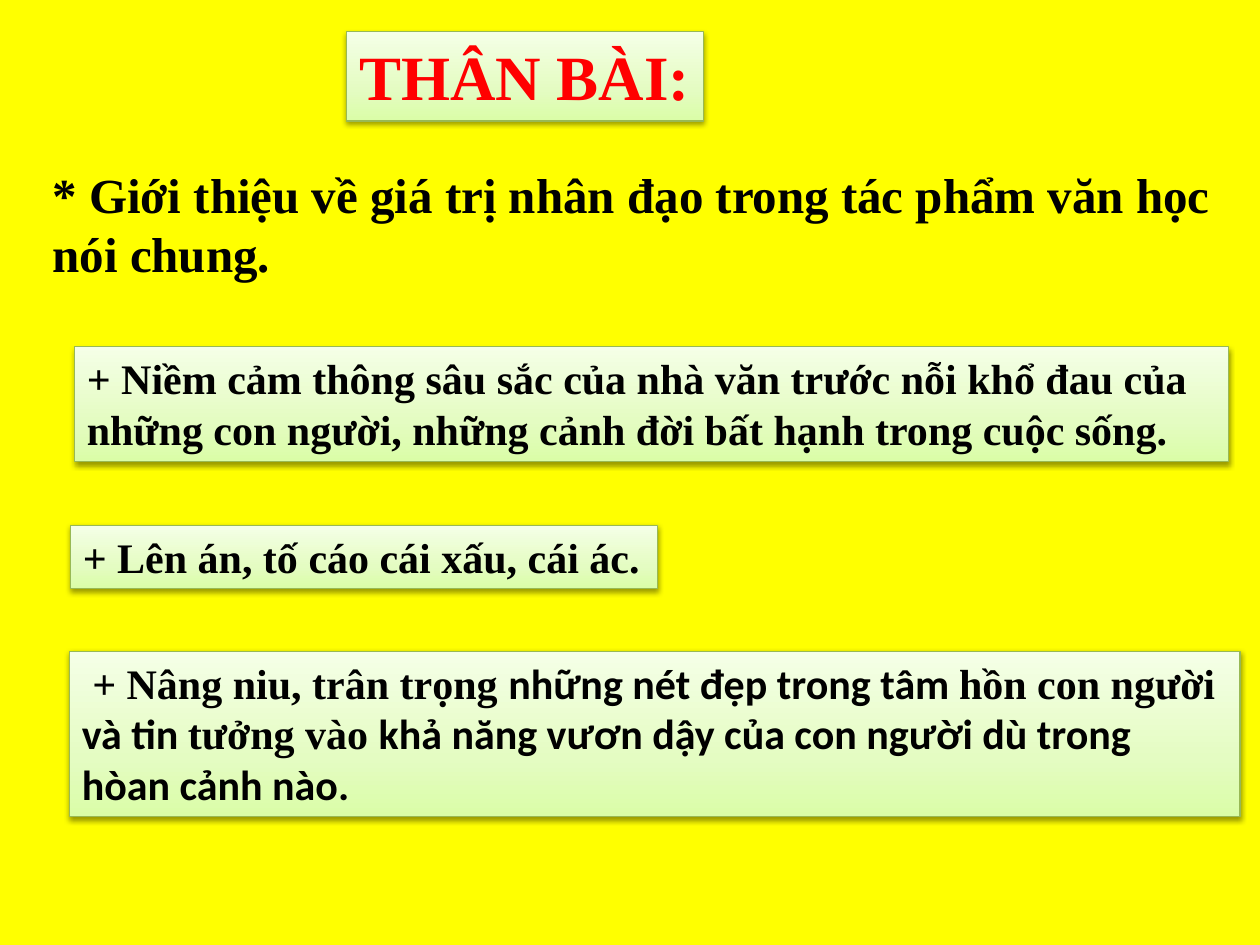
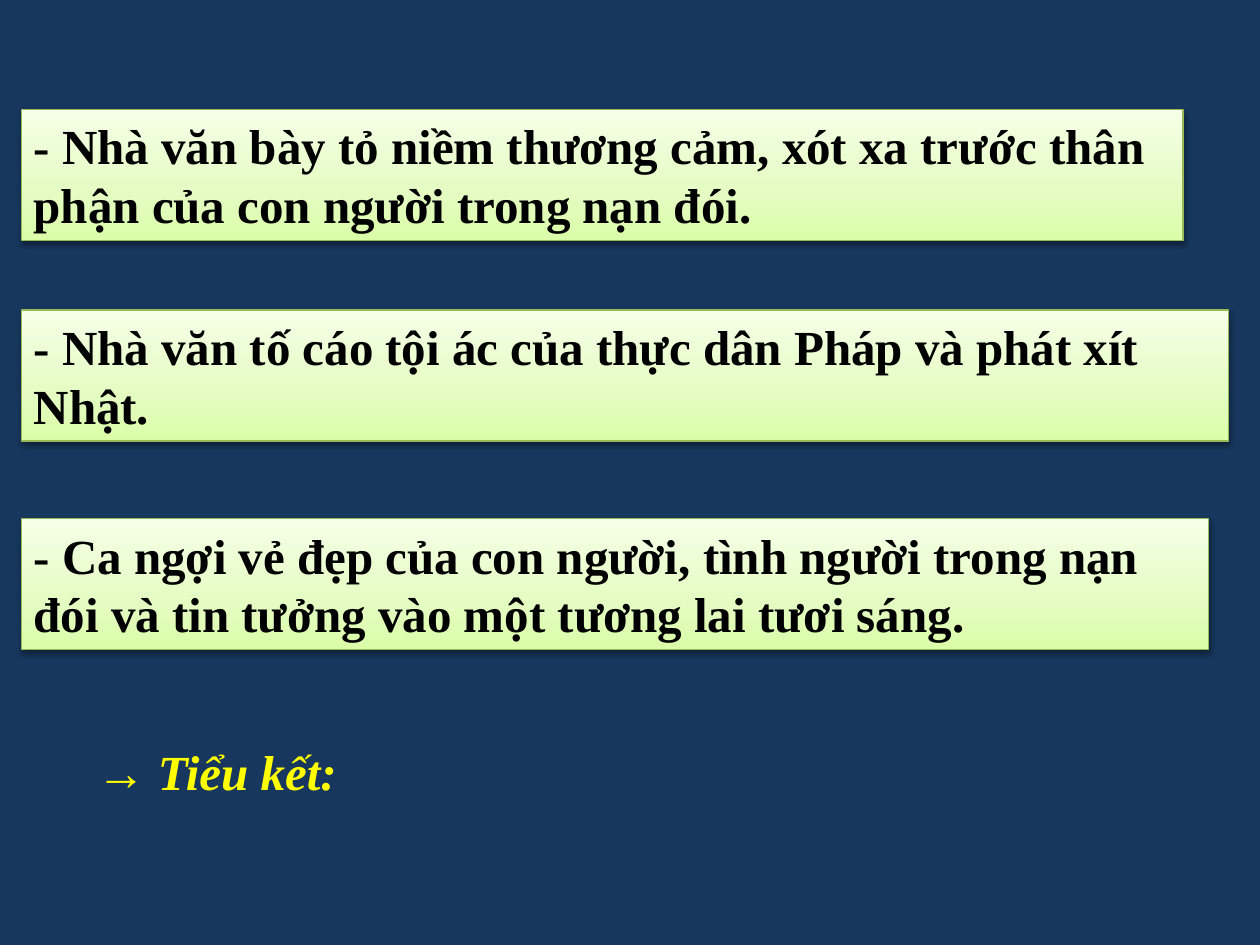
from dataclasses import dataclass

from lxml import etree
from pptx import Presentation
from pptx.dml.color import RGBColor
from pptx.enum.shapes import MSO_SHAPE as Preset
from pptx.enum.text import MSO_ANCHOR as Anchor, MSO_AUTO_SIZE as AutoSize, PP_ALIGN as Align
from pptx.oxml.ns import qn
from pptx.util import Cm, Pt

COLORS = {
    "yellow": "FFFF00",
    "navy": "17375E",
    "red": "FF0000",
    "black": "000000",
    "card edge": "98B955",
    "card bottom": "DAFDA7",
    "card middle": "E4FCC2",
    "card top": "F5FFE7",
}
CARD_STOPS = {0: "card bottom", 35: "card middle", 100: "card top"}
SHADOW = {"blurRad": Pt(3.1), "dist": Pt(1.6), "dir": 90 * 60000, "rotWithShape": 0}
SERIF, SANS = "Times New Roman", "Calibri"


@dataclass(frozen=True)
class Span:
    text: str
    font: str = SERIF


@dataclass(frozen=True)
class TextBlock:
    """A text on the page; place is left, top, width, height in cm."""
    place: tuple[float, float, float, float]
    spans: tuple[Span, ...]
    size: int = 28
    color: str = "black"
    italic: bool = False
    wrap: bool = True
    card: bool = True


@dataclass(frozen=True)
class Page:
    background: str
    blocks: tuple[TextBlock, ...]


def argument(top: float, width: float, text: str) -> TextBlock:
    """One of the wide cards aligned at the left of the second page."""
    return TextBlock((0.43, top, width, 2.64), (Span(text),))


PAGES = (
    Page("yellow", (
        TextBlock((6.99, 0.64, 7.19, 1.8), (Span("THÂN BÀI:"),), size=36, color="red"),
        TextBlock((0.81, 3.2, 24.18, 2.64), (
            Span("* Giới thiệu về giá trị nhân đạo trong tác phẩm văn học nói chung."),
        ), card=False),
        TextBlock((1.4, 13.13, 23.6, 3.33), (
            Span(" + Nâng niu, trân trọng "),
            Span("những nét đẹp trong tâm ", SANS),
            Span("hồn con người "),
            Span("và tin ", SANS),
            Span("tưởng vào "),
            Span("khả năng vươn dậy của con người dù trong hòan cảnh nào.", SANS),
        ), size=24),
        TextBlock((1.5, 6.99, 23.27, 2.31), (
            Span("+ Niềm cảm thông sâu sắc của nhà văn trước nỗi khổ đau của "
                 "những con người, những cảnh đời bất hạnh trong cuộc sống."),
        ), size=24),
        TextBlock((1.42, 10.59, 11.84, 1.27), (
            Span("+ Lên án, tố cáo cái xấu, cái ác."),
        ), size=24, wrap=False),
    )),
    Page("navy", (
        argument(2.21, 23.42, "- Nhà văn bày tỏ niềm thương cảm, xót xa trước thân phận "
                              "của con người trong nạn đói."),
        argument(6.25, 24.33, "- Nhà văn tố cáo tội ác của thực dân Pháp và phát xít Nhật."),
        argument(10.46, 23.93, "- Ca ngợi vẻ đẹp của con người, tình người trong nạn đói "
                               "và tin tưởng vào một tương lai tươi sáng."),
        TextBlock((1.7, 14.83, 5.64, 1.45), (Span("→ Tiểu kết:"),),
                  color="yellow", italic=True, wrap=False, card=False),
    )),
)


def rgb(name: str) -> RGBColor:
    return RGBColor.from_string(COLORS[name])


def add_element(parent, tag: str, **values):
    """Append a DrawingML element with the given attributes."""
    texts = {key: str(value) for key, value in values.items()}
    return etree.SubElement(parent, qn(f"a:{tag}"), texts)


def style_card(box) -> None:
    box.line.color.rgb = rgb("card edge")
    box.line.width = Pt(0.75)

    gradient = etree.Element(qn("a:gradFill"), rotWithShape="1")
    stops = add_element(gradient, "gsLst")
    for percent, name in CARD_STOPS.items():
        stop = add_element(stops, "gs", pos=percent * 1000)
        add_element(stop, "srgbClr", val=COLORS[name])
    add_element(gradient, "lin", ang=270 * 60000, scaled=0)
    properties = box.element.spPr
    properties.find(qn("a:ln")).addprevious(gradient)

    box.shadow.inherit = False
    effects = properties.find(qn("a:effectLst"))
    shadow = add_element(effects, "outerShdw", **SHADOW)
    shade = add_element(shadow, "srgbClr", val=COLORS["black"])
    add_element(shade, "alpha", val=38000)


def add_block(slide, block: TextBlock) -> None:
    place = [Cm(length) for length in block.place]
    if block.card:
        box = slide.shapes.add_shape(Preset.RECTANGLE, *place)
        style_card(box)
    else:
        box = slide.shapes.add_textbox(*place)

    frame = box.text_frame
    frame_format = {
        "word_wrap": block.wrap,
        "auto_size": AutoSize.SHAPE_TO_FIT_TEXT,
        "vertical_anchor": Anchor.TOP,
    }
    for name, value in frame_format.items():
        setattr(frame, name, value)

    para = frame.paragraphs[0]
    para.alignment = Align.LEFT
    for span in block.spans:
        run = para.add_run()
        run.text = span.text
        font_format = {"name": span.font, "size": Pt(block.size),
                       "bold": True, "italic": block.italic}
        for name, value in font_format.items():
            setattr(run.font, name, value)
        run.font.color.rgb = rgb(block.color)


def add_page(deck, page: Page) -> None:
    slide = deck.slides.add_slide(deck.slide_layouts[6])
    fill = slide.background.fill
    fill.solid()
    fill.fore_color.rgb = rgb(page.background)
    for block in page.blocks:
        add_block(slide, block)


def main() -> None:
    deck = Presentation()
    deck.slide_width, deck.slide_height = Cm(25.4), Cm(19.05)
    for page in PAGES:
        add_page(deck, page)
    deck.save("out.pptx")


if __name__ == "__main__":
    main()
